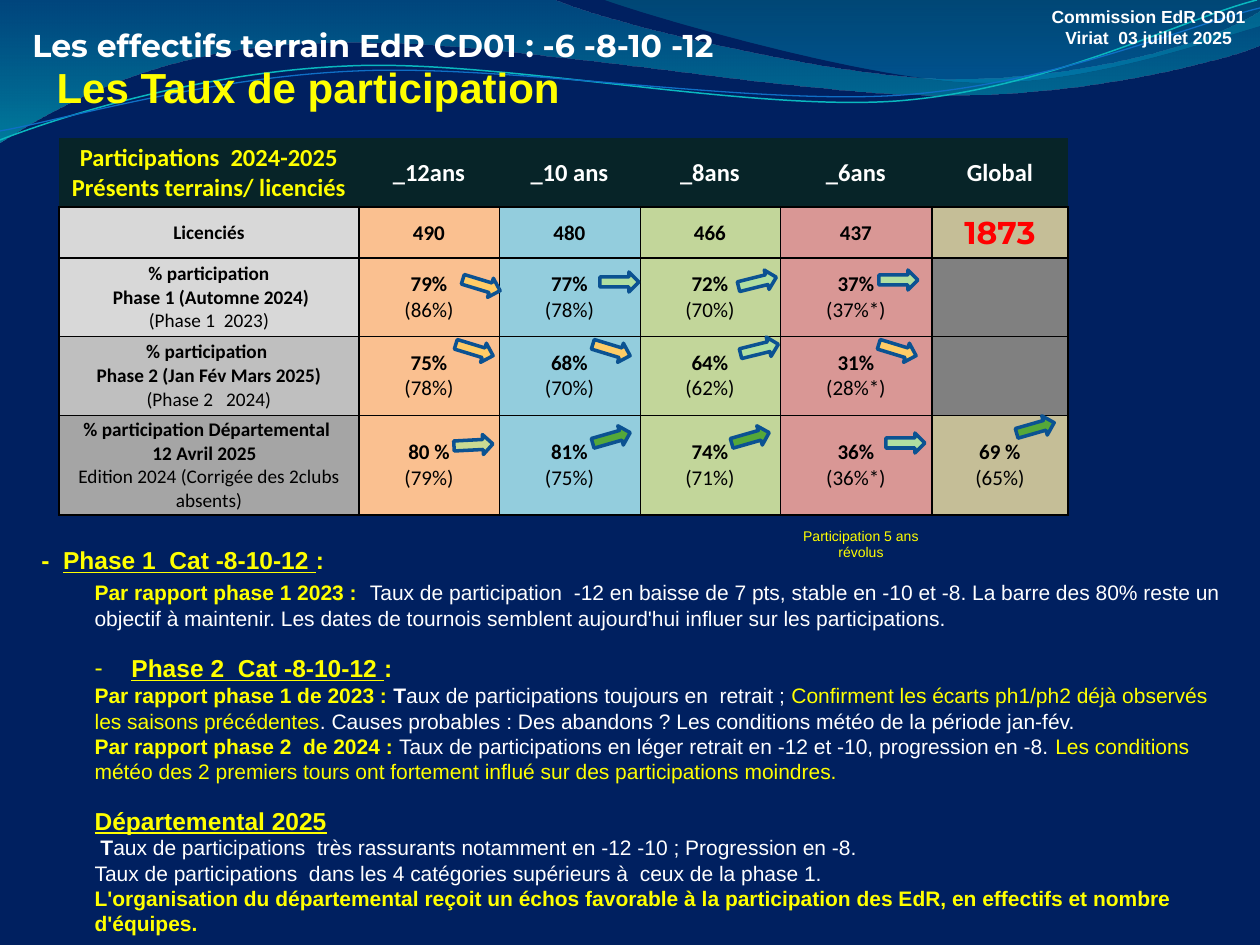
from dataclasses import dataclass

from pptx import Presentation
from pptx.dml.color import RGBColor
from pptx.enum.shapes import MSO_SHAPE
from pptx.enum.text import MSO_ANCHOR, MSO_AUTO_SIZE, PP_ALIGN
from pptx.oxml.ns import qn
from pptx.util import Pt
from lxml.etree import SubElement

PX = 914400 / 126


@dataclass(frozen=True)
class Theme:
    """Colours, faces and type sizes of the slide."""
    night: str = "002060"
    yellow: str = "FFFF00"
    white: str = "FFFFFF"
    black: str = "000000"
    red: str = "FF0000"
    header: str = "072428"
    gray: str = "808080"
    labels: tuple = ("D8D8D8", "D8D8D8", "BFBFBF", "A5A5A5")
    ages: tuple = ("FAC090", "93CDDD", "C2D69A", "D99795", "C5BE97")
    outline: str = "0B5292"
    down: str = "FFCC66"
    stable: str = "B0DFA1"
    slight: str = "C9DA92"
    up: str = "55A839"
    sans: str = "Arial"
    grid: str = "Calibri"
    display: str = "Montserrat"
    title: int = 24
    banner: int = 18
    heading: int = 14
    text: int = 12
    label: int = 11
    corner: int = 10
    note: int = 8


THEME = Theme()
HEADERS = ["Participations  2024-2025\nPrésents terrains/ licenciés",
           "_12ans", "_10 ans", "_8ans", "_6ans", "Global"]
ROWS = [
    ["Licenciés", "490", "480", "466", "437", "1873"],
    ["% participation\v Phase 1 (Automne 2024)\n(Phase 1  2023)",
     "79%\n(86%)", "77%\n(78%)", "72%\n(70%)", "37%\n(37%*)", ""],
    ["% participation \vPhase 2 (Jan Fév Mars 2025)\n(Phase 2   2024)",
     "75%\n(78%)", "68%\n(70%)", "64%\n(62%)", "31%\n(28%*)", ""],
    ["% participation Départemental \v12 Avril 2025  \nEdition 2024 (Corrigée des 2clubs absents)",
     "80 %\n(79%)", "81%\n(75%)", "74%\n(71%)", "36%\n(36%*)", "69 %\n(65%)"],
]
ARROWS = [
    (462, 275, 17, THEME.down), (600, 272, 0, THEME.stable),
    (738, 272, -14, THEME.stable), (879, 270, 0, THEME.stable),
    (455, 340, 17, THEME.down), (592, 340, 17, THEME.down),
    (740, 339, -14, THEME.stable), (878, 340, 17, THEME.down),
    (454, 435, -3, THEME.slight), (592, 428, -16, THEME.up),
    (731, 428, -16, THEME.up), (886, 433, 0, THEME.stable),
    (1016, 418, -16, THEME.up),
]
BANDS = [
    ([[(0, 0)], [(554, 0)], [(600, 21), (837, 79), (955, 79)],
      [(1075, 79), (1207, 47), (1260, 11)], [(1260, 45)],
      [(1239, 55), (1096, 96), (940, 95)], [(783, 95), (481, 35), (324, 43)],
      [(163, 45), (58, 105), (0, 142)]],
     [(0, "0074A1", 45), (1, "00C6CF", 55)]),
    ([[(604, 0)], [(641, 14), (859, 78), (969, 82)],
      [(1079, 87), (1211, 40), (1260, 26)], [(1260, 0)]],
     [(0, "00A1A9", 30), (0.8, "008BBF", 45)]),
]
WAVES = [
    ([[(0, 140)], [(60, 117), (199, 72), (349, 66)],
      [(498, 59), (747, 112), (898, 101)], [(1050, 89), (1182, 19), (1257, 0)]],
     "0AB8BF", 0.85),
    ([[(0, 131)], [(59, 121), (207, 77), (357, 71)],
      [(508, 64), (752, 106), (903, 95)], [(1053, 84), (1186, 26), (1260, 8)]],
     "0F6FC6", 0.75),
]
STRONG, LINK, PLAIN, SOFT, LEAD = "strong", "link", "plain", "soft", "lead"
SPAN_STYLES = {
    STRONG: (THEME.yellow, True, False), LINK: (THEME.yellow, True, True),
    PLAIN: (THEME.white, False, False), SOFT: (THEME.yellow, False, False),
    LEAD: (THEME.white, True, False),
}
COMMENTS = [
    (THEME.heading, 0, 0, "", [
        (" ", STRONG, THEME.banner), ("-  ", STRONG), ("Phase 1  Cat -8-10-12 ", LINK), (":", STRONG)]),
    (THEME.text, 62, 0, "", [
        ("Par rapport phase 1 2023 : ", STRONG), (" ", STRONG, THEME.heading),
        ("Taux de participation  -12 en baisse de 7 pts, stable en -10 et -8. La barre des 80% reste un "
         "objectif à maintenir. Les dates de tournois semblent aujourd'hui influer sur les participations.", PLAIN)]),
    (THEME.heading, 92, 13, "-", [(" ", STRONG), ("Phase 2  Cat -8-10-12 ", LINK), (":", STRONG)]),
    (THEME.text, 62, 0, "", [
        ("Par rapport phase 1 de 2023 : ", STRONG), ("T", LEAD),
        ("aux de participations toujours en  retrait ; ", PLAIN),
        ("Confirment les écarts ph1/ph2 déjà observés les saisons précédentes", SOFT),
        (". Causes probables : Des abandons ? Les conditions météo de la période jan-fév.", PLAIN)]),
    (THEME.text, 62, 0, "", [
        ("Par rapport phase 2  de 2024 : ", STRONG),
        ("Taux de participations en léger retrait en -12 et -10, progression en -8. ", PLAIN),
        ("Les conditions météo des 2 premiers tours ont fortement influé sur des participations moindres.", SOFT)]),
    (THEME.heading, 62, 12.5, "", [("Départemental 2025", LINK)]),
    (THEME.text, 62, 0, "", [
        (" T", LEAD),
        ("aux de participations  très rassurants notamment en -12 -10 ; Progression en -8.", PLAIN)]),
    (THEME.text, 62, 0, "", [
        ("Taux de participations  dans les 4 catégories supérieurs à  ceux de la phase 1.", PLAIN)]),
    (THEME.text, 62, 0, "", [
        ("L'organisation du départemental reçoit un échos favorable à la participation des EdR, "
         "en effectifs et nombre d'équipes.", STRONG)]),
]


def px(*lengths):
    """Turn px lengths into EMU."""
    return [round(length * PX) for length in lengths]


def set_font(font, face, size, color, bold=False, underline=False):
    """Apply a complete type style."""
    font.name, font.size, font.bold, font.underline = face, Pt(size), bold, underline
    font.color.rgb = RGBColor.from_string(color)


def place(box, left, top, width, height):
    """Move a text holder to the front at a place, with fixed size and wrapping."""
    box.element.getparent().append(box.element)
    box.left, box.top, box.width, box.height = px(left, top, width, height)
    frame = box.text_frame
    frame.word_wrap, frame.auto_size = True, MSO_AUTO_SIZE.NONE
    frame.vertical_anchor = MSO_ANCHOR.TOP
    return frame


def write_lines(frame, text, align, *style):
    """Write one paragraph per line in a single style."""
    frame.text = text
    for para in frame.paragraphs:
        para.alignment = align
        set_font(para.font, *style)


def add_curve(page, segments, close):
    """Add a freeform of straight and cubic segments without a shadow."""
    start, *rest = [point for segment in segments for point in segment]
    builder = page.shapes.build_freeform(*start, scale=PX)
    builder.add_line_segments(rest, close=close)
    shape = builder.convert_to_shape()
    shape.shadow.inherit = False
    lines = iter(list(shape.element.iter(qn("a:lnTo"))))
    for segment in segments[1:]:
        nodes = [next(lines) for _ in segment]
        if len(nodes) == 3:
            outline = nodes[0].getparent()
            cubic = SubElement(outline, qn("a:cubicBezTo"))
            outline.replace(nodes[0], cubic)
            for node in nodes:
                cubic.append(node[0])
            for node in nodes[1:]:
                outline.remove(node)
    return shape


def add_band(page, segments, stops):
    """Add a translucent gradient band."""
    band = add_curve(page, segments, True)
    band.line.fill.background()
    band.fill.gradient()
    band.fill.gradient_angle = 270
    for stop, (position, color, _) in zip(band.fill.gradient_stops, stops):
        stop.position, stop.color.rgb = position, RGBColor.from_string(color)
    for node, (_, _, opacity) in zip(band.element.spPr.iter(qn("a:srgbClr")), stops):
        SubElement(node, qn("a:alpha"), val=str(opacity * 1000))


def add_wave(page, segments, color, width):
    """Add a thin open wave."""
    wave = add_curve(page, segments, False)
    wave.fill.background()
    wave.line.color.rgb, wave.line.width = RGBColor.from_string(color), Pt(width)


def set_borders(cell, row, column):
    """Draw thin rules inside the data block and full ones around it."""
    widths = {"L": 0.5 if column in (2, 3, 4) else 1, "R": 0.5 if column in (1, 2, 3) else 1,
              "T": 0.5 if row > 2 else 1, "B": 0.5 if row in (2, 3) else 1}
    properties = cell._tc.get_or_add_tcPr()
    for side, width in widths.items():
        line = SubElement(properties, qn(f"a:ln{side}"), w=str(Pt(width)))
        if row == 0 and side != "B":
            SubElement(line, qn("a:noFill"))
        else:
            SubElement(SubElement(line, qn("a:solidFill")), qn("a:srgbClr"), val=THEME.black)


def cell_style(row, column, text):
    """Return fill, face, size and colour of a cell."""
    if row == 0:
        return THEME.header, THEME.grid, THEME.heading, THEME.white if column else THEME.yellow
    if column == 0:
        return THEME.labels[row - 1], THEME.grid, THEME.label, THEME.black
    if (row, column) == (1, 5):
        return THEME.ages[4], THEME.display, THEME.banner, THEME.red
    return THEME.ages[column - 1] if text else THEME.gray, THEME.grid, THEME.text, THEME.black


def add_participation_table(page):
    """Add the table of participation by age group."""
    widths, heights = (300, 140, 141, 140, 152, 136), (69, 51, 78, 79, 100)
    table = page.shapes.add_table(5, 6, *px(59, 138, sum(widths), sum(heights))).table
    table.first_row = table.horz_banding = False
    for column, width in zip(table.columns, px(*widths)):
        column.width = width
    for row, height in zip(table.rows, px(*heights)):
        row.height = height
    for i, texts in enumerate([HEADERS, *ROWS]):
        for j, text in enumerate(texts):
            cell = table.cell(i, j)
            fill, *style = cell_style(i, j, text)
            set_borders(cell, i, j)
            cell.fill.solid()
            cell.fill.fore_color.rgb = RGBColor.from_string(fill)
            cell.margin_left, cell.margin_right, cell.margin_top, cell.margin_bottom = px(1, 1, 1, 0)
            cell.vertical_anchor = MSO_ANCHOR.MIDDLE
            write_lines(cell.text_frame, text, PP_ALIGN.CENTER, *style, True)
            if i > 1:
                cell.text_frame.paragraphs[-1].font.bold = False


def add_trend_arrow(page, left, top, angle, color):
    """Add one trend arrow."""
    arrow = page.shapes.add_shape(MSO_SHAPE.RIGHT_ARROW, *px(left, top, 39, 20))
    arrow.rotation, arrow.shadow.inherit = angle, False
    arrow.fill.solid()
    arrow.fill.fore_color.rgb = RGBColor.from_string(color)
    arrow.line.color.rgb, arrow.line.width = RGBColor.from_string(THEME.outline), Pt(2)


def write_comments(frame):
    """Write the comments with their indents, bullets and mixed spans."""
    for index, (size, margin, gap, bullet, spans) in enumerate(COMMENTS):
        para = frame.add_paragraph() if index else frame.paragraphs[0]
        properties = para._p.get_or_add_pPr()
        left, hanging = px(margin, -30 if bullet else 0)
        properties.set("marL", str(left))
        properties.set("indent", str(hanging))
        if bullet:
            SubElement(properties, qn("a:buChar"), char=bullet)
        else:
            SubElement(properties, qn("a:buNone"))
        para.space_before, para.alignment = Pt(gap), PP_ALIGN.LEFT
        para.level = 1 if size == THEME.text else 0
        for text, style, *own_size in spans:
            span = para.add_run()
            span.text = text
            color, bold, underline = SPAN_STYLES[style]
            set_font(span.font, THEME.sans, own_size[0] if own_size else size, color, bold, underline)


def main():
    """Build the slide and save it."""
    deck = Presentation()
    deck.slide_width, deck.slide_height = px(1260, 945)
    page = deck.slides.add_slide(deck.slide_layouts[1])
    page.background.fill.solid()
    page.background.fill.fore_color.rgb = RGBColor.from_string(THEME.night)
    for band in BANDS:
        add_band(page, *band)
    for wave in WAVES:
        add_wave(page, *wave)
    add_participation_table(page)
    write_comments(place(page.placeholders[1], 20, 532, 1221, 413))
    write_lines(place(page.shapes.title, 44, 55, 861, 63), "Les Taux de participation",
                PP_ALIGN.LEFT, THEME.sans, THEME.title, THEME.yellow, True)
    labels = [
        ((20, 20, 912, 50), "Les effectifs terrain EdR CD01 : -6 -8-10 -12",
         PP_ALIGN.LEFT, THEME.display, THEME.banner, THEME.white, True),
        ((1037, 0, 223, 55), "Commission EdR CD01\nViriat  03 juillet 2025",
         PP_ALIGN.CENTER, THEME.sans, THEME.corner, THEME.white, True),
        ((777, 521, 168, 47), "Participation 5 ans révolus",
         PP_ALIGN.CENTER, THEME.sans, THEME.note, THEME.yellow, False),
    ]
    for area, *content in labels:
        write_lines(place(page.shapes.add_textbox(*px(*area)), *area), *content)
    for arrow in ARROWS:
        add_trend_arrow(page, *arrow)
    deck.save("out.pptx")


if __name__ == "__main__":
    main()
